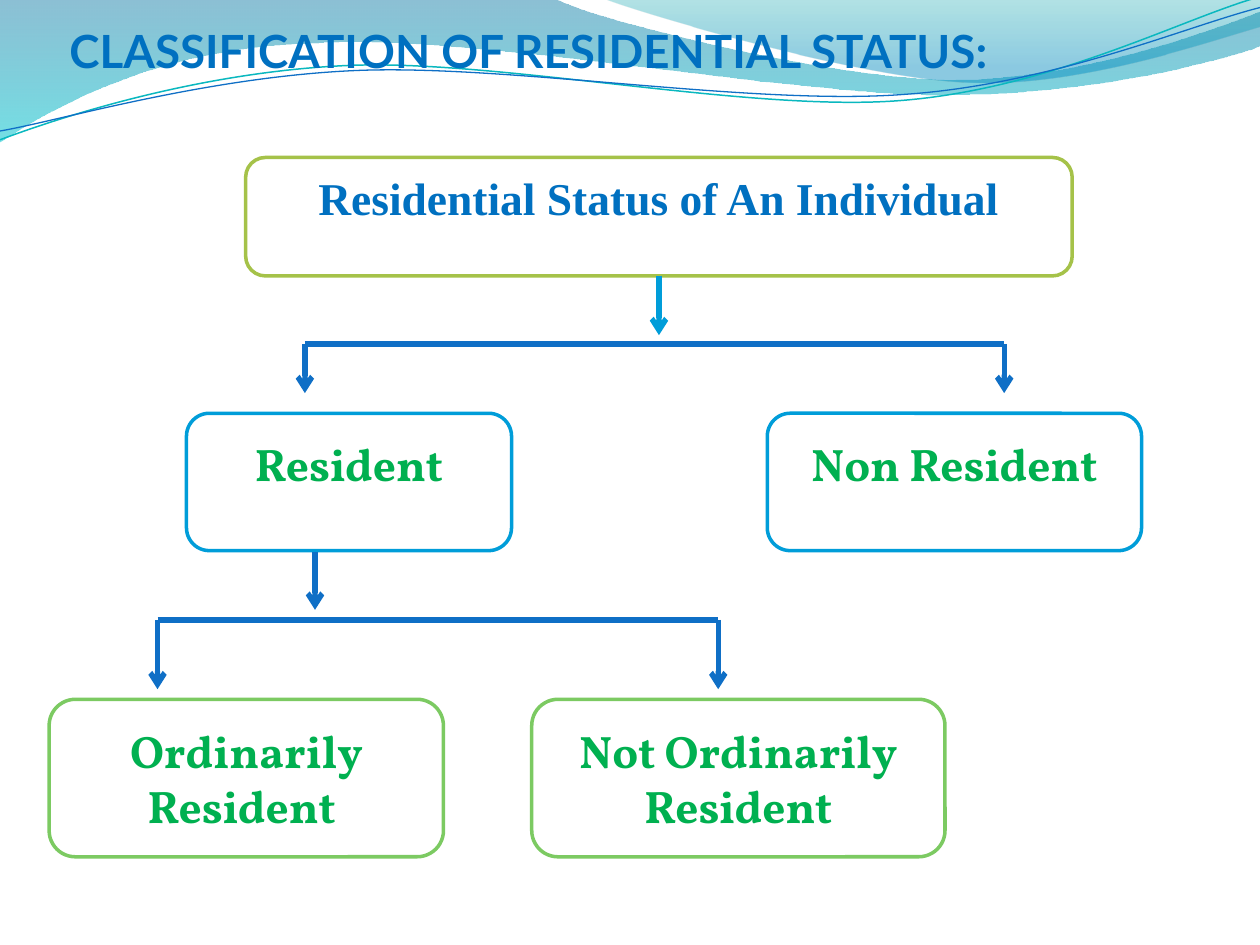
from pptx import Presentation
from pptx.dml.color import RGBColor as RGB
from pptx.enum.shapes import MSO_CONNECTOR as CONN, MSO_SHAPE as SHAPE
from pptx.enum.text import MSO_ANCHOR as ANCHOR, MSO_AUTO_SIZE as AUTO, PP_ALIGN as ALIGN
from pptx.oxml.ns import qn
from pptx.util import Inches, Pt
from lxml.etree import SubElement

WHITE = RGB(0xFF, 0xFF, 0xFF)
TITLE_BLUE = RGB(0x00, 0x70, 0xC0)
TEXT_GREEN = RGB(0x00, 0xB0, 0x50)
LINE_BLUE = RGB(0x0F, 0x6F, 0xC6)
SKY = RGB(0x00, 0x9D, 0xD9)
LIME = RGB(0xA5, 0xC2, 0x49)
LEAF = RGB(0x7C, 0xCA, 0x62)
AQUA = RGB(0x0A, 0xB8, 0xBF)
DEEP_TEAL = RGB(0x00, 0x74, 0xA1)
TURQUOISE = RGB(0x00, 0xC6, 0xCF)
TEAL = RGB(0x00, 0xA1, 0xA9)
OCEAN = RGB(0x00, 0x8B, 0xBF)

LEFT_WAVE = [(0, 0), (4.4, -0.01),
             (4.76, 0.17, 6.64, 0.63, 7.58, 0.63), (8.53, 0.63, 9.58, 0.26, 10, 0.09),
             (10.01, 0.36),
             (9.83, 0.44, 8.7, 0.76, 7.46, 0.75), (6.22, 0.75, 3.82, 0.28, 2.57, 0.34),
             (1.29, 0.36, 0.46, 0.83, -0.01, 1.13)]
RIGHT_WAVE = [(4.79, -0.01), (5.09, 0.11, 6.82, 0.62, 7.69, 0.65),
              (8.56, 0.69, 9.61, 0.32, 10, 0.21), (10, 0)]
AQUA_CURVE = [(0, 1.11), (0.48, 0.93, 1.58, 0.57, 2.77, 0.52),
              (3.95, 0.47, 5.93, 0.89, 7.13, 0.8), (8.33, 0.71, 9.38, 0.15, 9.98, -0.02)]
BLUE_CURVE = [(0, 1.04), (0.47, 0.96, 1.64, 0.61, 2.83, 0.56),
              (4.03, 0.51, 5.97, 0.84, 7.17, 0.75), (8.36, 0.67, 9.41, 0.21, 10, 0.06)]


def write(tf, text, font="Vollkorn", size=26, color=TEXT_GREEN, align=ALIGN.CENTER):
    """Put one bold formatted run into a text frame."""
    p = tf.paragraphs[0]
    p.alignment = align
    r = p.add_run()
    r.text = text
    r.font.name, r.font.size, r.font.bold = font, Pt(size), True
    r.font.color.rgb = color


class Diagram:
    """A slide on a grid of one-inch columns and rows, with its drawing style."""

    def __init__(self, prs):
        """Add a title-only slide."""
        self.s = prs.slides.add_slide(prs.slide_layouts[5])
        self.shapes = self.s.shapes

    def outline(self, parts, closed):
        """Draw a freeform whose six-number parts are cubic curves."""
        ends = [(Inches(part[-2]), Inches(part[-1])) for part in parts]
        builder = self.shapes.build_freeform(*ends[0], scale=1.0)
        builder.add_line_segments(ends[1:], close=closed)
        sp = builder.convert_to_shape()
        sp.shadow.inherit = False
        segments = list(sp._element.spPr.iter(qn("a:lnTo")))
        for segment, part in zip(segments, parts[1:]):
            if len(part) == 6:
                bend = segment.makeelement(qn("a:cubicBezTo"))
                for x, y in zip(part[::2], part[1::2]):
                    SubElement(bend, qn("a:pt"), x=str(Inches(x) - sp.left),
                               y=str(Inches(y) - sp.top))
                segment.getparent().replace(segment, bend)
        return sp

    def wave(self, parts, *stops):
        """Draw a translucent band shaded from top to bottom."""
        sp = self.outline(parts, True)
        sp.line.fill.background()
        sp.fill.gradient()
        sp.fill.gradient_angle = 270
        for stop, (position, color, _) in zip(sp.fill.gradient_stops, stops):
            stop.position, stop.color.rgb = position, color
        for clr, (_, _, opacity) in zip(sp._element.spPr.iter(qn("a:srgbClr")), stops):
            SubElement(clr, qn("a:alpha"), val=str(opacity * 1000))

    def curve(self, parts, color, width):
        """Draw an open thin curve."""
        sp = self.outline(parts, False)
        sp.fill.background()
        sp.line.color.rgb, sp.line.width = color, Pt(width)

    def title(self, text, left, top, width, height):
        """Place the title above what is drawn so far."""
        sp = self.shapes.title
        sp._element.getparent().append(sp._element)
        sp.left, sp.top, sp.width, sp.height = map(Inches, (left, top, width, height))
        tf = sp.text_frame
        tf.auto_size, tf.vertical_anchor = AUTO.NONE, ANCHOR.BOTTOM
        tf.margin_left = tf.margin_right = tf.margin_bottom = 0
        write(tf, text, font="Lato", size=26.1, color=TITLE_BLUE, align=ALIGN.LEFT)

    def box(self, text, left, top, width, height, border, lift=0, **style):
        """Draw a rounded box whose text is raised by a deeper bottom margin."""
        sp = self.shapes.add_shape(SHAPE.FLOWCHART_ALTERNATE_PROCESS,
                                   *map(Inches, (left, top, width, height)))
        sp.shadow.inherit = False
        sp.fill.solid()
        sp.fill.fore_color.rgb = WHITE
        sp.line.color.rgb, sp.line.width = border, Pt(2)
        tf = sp.text_frame
        tf.word_wrap, tf.vertical_anchor = True, ANCHOR.MIDDLE
        tf.margin_bottom = Inches(0.05 + lift)
        write(tf, text, **style)
        return sp

    def line(self, x1, y1, x2, y2, color=LINE_BLUE, arrow=True):
        """Draw a thick straight line, with an arrowhead unless told otherwise."""
        c = self.shapes.add_connector(CONN.STRAIGHT, *map(Inches, (x1, y1, x2, y2)))
        c.line.color.rgb, c.line.width = color, Pt(3)
        if arrow:
            SubElement(c.line._get_or_add_ln(), qn("a:tailEnd"), type="arrow")
        SubElement(c._element.spPr, qn("a:effectLst"))
        return c

    def fork(self, left, right, top, bottom):
        """Draw a crossbar with an arrow down from each end."""
        self.line(left, top, right, top, arrow=False)
        for x in (left, right):
            self.line(x, top, x, bottom)


def main():
    """Build the residential status slide."""
    prs = Presentation()
    prs.slide_width, prs.slide_height = Inches(10), Inches(7.5)
    d = Diagram(prs)
    d.wave(LEFT_WAVE, (0, DEEP_TEAL, 45), (1, TURQUOISE, 55))
    d.wave(RIGHT_WAVE, (0, TEAL, 30), (0.8, OCEAN, 45))
    d.curve(AQUA_CURVE, AQUA, 0.85)
    d.curve(BLUE_CURVE, LINE_BLUE, 0.75)
    d.title("CLASSIFICATION OF RESIDENTIAL STATUS:", 0.55, 0, 9, 0.62)

    root = d.box("Residential Status of An Individual", 1.95, 1.25, 6.56, 0.94, LIME,
                 lift=0.3, font="Times New Roman", color=TITLE_BLUE)
    d.fork(2.42, 7.97, 2.73, 3.12)
    for text, left, width in (("Resident", 1.48, 2.58), ("Non Resident", 6.09, 2.97)):
        d.box(text, left, 3.28, width, 1.09, SKY, lift=0.3)
    d.line(5.23, 2.19, 5.23, 2.66, color=SKY).begin_connect(root, 2)

    d.line(2.5, 4.38, 2.5, 4.84)
    d.fork(1.25, 5.7, 4.92, 5.47)
    for text, left, width in (("Ordinarily Resident ", 0.39, 3.13),
                              ("Not Ordinarily Resident", 4.22, 3.28)):
        d.box(text, left, 5.55, width, 1.25, LEAF)
    prs.save("out.pptx")


if __name__ == "__main__":
    main()
